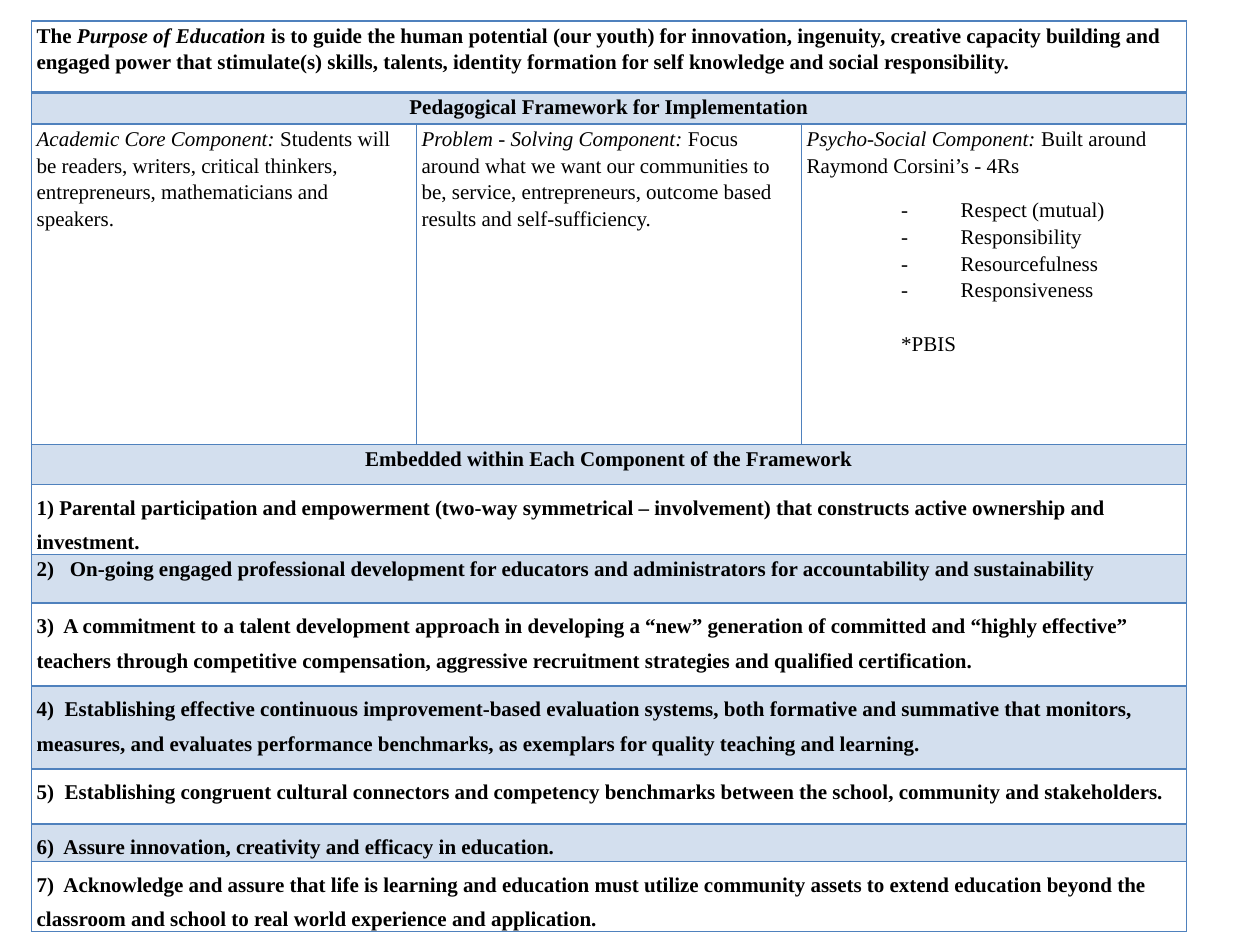
from dataclasses import dataclass

from lxml import etree
from pptx import Presentation
from pptx.dml.color import RGBColor
from pptx.enum.text import PP_ALIGN
from pptx.oxml.ns import qn
from pptx.util import Pt

CENTER = PP_ALIGN.CENTER
LEFT = PP_ALIGN.LEFT

BLACK = RGBColor(0x00, 0x00, 0x00)
BORDER_BLUE = RGBColor(0x4F, 0x81, 0xBD)
BAND_BLUE = RGBColor(0xD3, 0xDF, 0xEE)

FONT_NAME = "Times New Roman"
COLUMN_COUNT = 3
COLUMN_WIDTH = 220
THIN = 1
THICK = 2.25
LIST_INDENT = 54
BULLET_GAP = 34


@dataclass(frozen=True)
class Line:
    text: str
    italic: str = ""
    lead: str = ""
    bold: bool = True
    align: PP_ALIGN = LEFT
    spacing: float = 1.15
    before: float = 0
    after: float = 10
    indent: float = 0
    bullet: str = ""


@dataclass(frozen=True)
class Row:
    height: float
    cells: tuple[tuple[Line, ...], ...]
    shaded: bool = False
    top: float = THIN
    bottom: float = THIN


def component(name: str, text: str) -> Line:
    return Line(text, italic=name, bold=False)


def list_item(text: str) -> Line:
    return Line(text, bold=False, after=0, indent=LIST_INDENT, bullet="-")


def full_row(height: float, line: Line, shaded: bool = False,
             top: float = THIN, bottom: float = THIN) -> Row:
    return Row(height, ((line,),), shaded, top, bottom)


COMPONENTS = (
    (component(
        "Academic Core Component:",
        " Students will be readers, writers, critical thinkers, "
        "entrepreneurs, mathematicians and speakers."),),
    (component(
        "Problem - Solving Component:",
        " Focus around what we want our communities to be, service, "
        "entrepreneurs, outcome based results and self-sufficiency."),),
    (
        component("Psycho-Social Component: ",
                  "Built around Raymond Corsini’s - 4Rs"),
        list_item("Respect (mutual)"),
        list_item("Responsibility"),
        list_item("Resourcefulness"),
        list_item("Responsiveness"),
        Line("*PBIS", bold=False, before=15.5, indent=LIST_INDENT),
    ),
)

ROWS = (
    full_row(41, Line(
        " is to guide the human potential (our youth) for innovation, "
        "ingenuity, creative capacity building and engaged power that "
        "stimulate(s) skills, talents, identity formation for self knowledge "
        "and social responsibility.",
        italic="Purpose of Education", lead="The "), bottom=THICK),
    full_row(18, Line("Pedagogical Framework for Implementation",
                      align=CENTER), shaded=True, top=THICK),
    Row(183, COMPONENTS),
    full_row(23, Line("Embedded within Each Component of the Framework",
                      align=CENTER), shaded=True),
    full_row(40, Line(
        "1) Parental participation and empowerment (two-way symmetrical – "
        "involvement) that constructs active ownership and investment.",
        spacing=1.5)),
    full_row(27.5, Line(
        "2)   On-going engaged professional development for educators and "
        "administrators for accountability and sustainability"), shaded=True),
    full_row(47.5, Line(
        "3)  A commitment to a talent development approach in developing a "
        "“new” generation of committed and “highly effective” teachers "
        "through competitive compensation, aggressive recruitment strategies "
        "and qualified certification.", spacing=1.5)),
    full_row(47.5, Line(
        "4)  Establishing effective continuous improvement-based evaluation "
        "systems, both formative and summative that monitors, measures, and "
        "evaluates performance benchmarks, as exemplars for quality teaching "
        "and learning.", spacing=1.5), shaded=True),
    full_row(31.5, Line(
        "5)  Establishing congruent cultural connectors and competency "
        "benchmarks between the school, community and stakeholders.",
        spacing=1.5)),
    full_row(21.5, Line(
        "6)  Assure innovation, creativity and efficacy in education.",
        spacing=1.5), shaded=True),
    full_row(40, Line(
        "7)  Acknowledge and assure that life is learning and education must "
        "utilize community assets to extend education beyond the classroom "
        "and school to real world experience and application.", spacing=1.5)),
)


def set_borders(cell, top: float, bottom: float) -> None:
    properties = cell._tc.get_or_add_tcPr()
    sides = (("lnL", THIN), ("lnR", THIN), ("lnT", top), ("lnB", bottom))
    for tag, width in sides:
        border = etree.SubElement(properties, qn(f"a:{tag}"), w=str(Pt(width)))
        fill = etree.SubElement(border, qn("a:solidFill"))
        etree.SubElement(fill, qn("a:srgbClr"), val=str(BORDER_BLUE))


def set_indent(paragraph, line: Line) -> None:
    properties = paragraph._p.get_or_add_pPr()
    gap = BULLET_GAP if line.bullet else 0
    properties.set("marL", str(Pt(line.indent + gap)))
    properties.set("indent", str(Pt(-gap)))
    if line.bullet:
        etree.SubElement(properties, qn("a:buFont"), typeface=FONT_NAME)
        etree.SubElement(properties, qn("a:buChar"), char=line.bullet)


def write_line(paragraph, line: Line) -> None:
    paragraph.alignment = line.align
    paragraph.line_spacing = line.spacing
    paragraph.space_before = Pt(line.before)
    paragraph.space_after = Pt(line.after)
    set_indent(paragraph, line)
    paragraph.font.name = FONT_NAME
    paragraph.font.size = Pt(12)
    paragraph.font.bold = line.bold
    paragraph.font.color.rgb = BLACK
    for text, italic in ((line.lead, False), (line.italic, True),
                         (line.text, False)):
        if text:
            run = paragraph.add_run()
            run.text = text
            run.font.italic = italic


def format_cell(cell, row: Row) -> None:
    cell.margin_left = cell.margin_right = Pt(3)
    cell.margin_top = cell.margin_bottom = Pt(0)
    set_borders(cell, row.top, row.bottom)
    if row.shaded:
        cell.fill.solid()
        cell.fill.fore_color.rgb = BAND_BLUE
    else:
        cell.fill.background()


def write_cell(cell, lines: tuple[Line, ...]) -> None:
    frame = cell.text_frame
    for index, line in enumerate(lines):
        write_line(frame.add_paragraph() if index else frame.paragraphs[0],
                   line)


def add_framework_table(slide) -> None:
    table = slide.shapes.add_table(
        len(ROWS), COLUMN_COUNT, Pt(18), Pt(12),
        Pt(COLUMN_COUNT * COLUMN_WIDTH),
        Pt(sum(row.height for row in ROWS))).table
    table.first_row = False
    table.horz_banding = False
    for index, row in enumerate(ROWS):
        table.rows[index].height = Pt(row.height)
        for column in range(COLUMN_COUNT):
            format_cell(table.cell(index, column), row)
        if len(row.cells) == 1:
            table.cell(index, 0).merge(table.cell(index, COLUMN_COUNT - 1))
        for column, lines in enumerate(row.cells):
            write_cell(table.cell(index, column), lines)


def main() -> None:
    presentation = Presentation()
    presentation.slide_width = Pt(720)
    presentation.slide_height = Pt(540)
    slide = presentation.slides.add_slide(presentation.slide_layouts[6])
    add_framework_table(slide)
    presentation.save("out.pptx")


if __name__ == "__main__":
    main()
